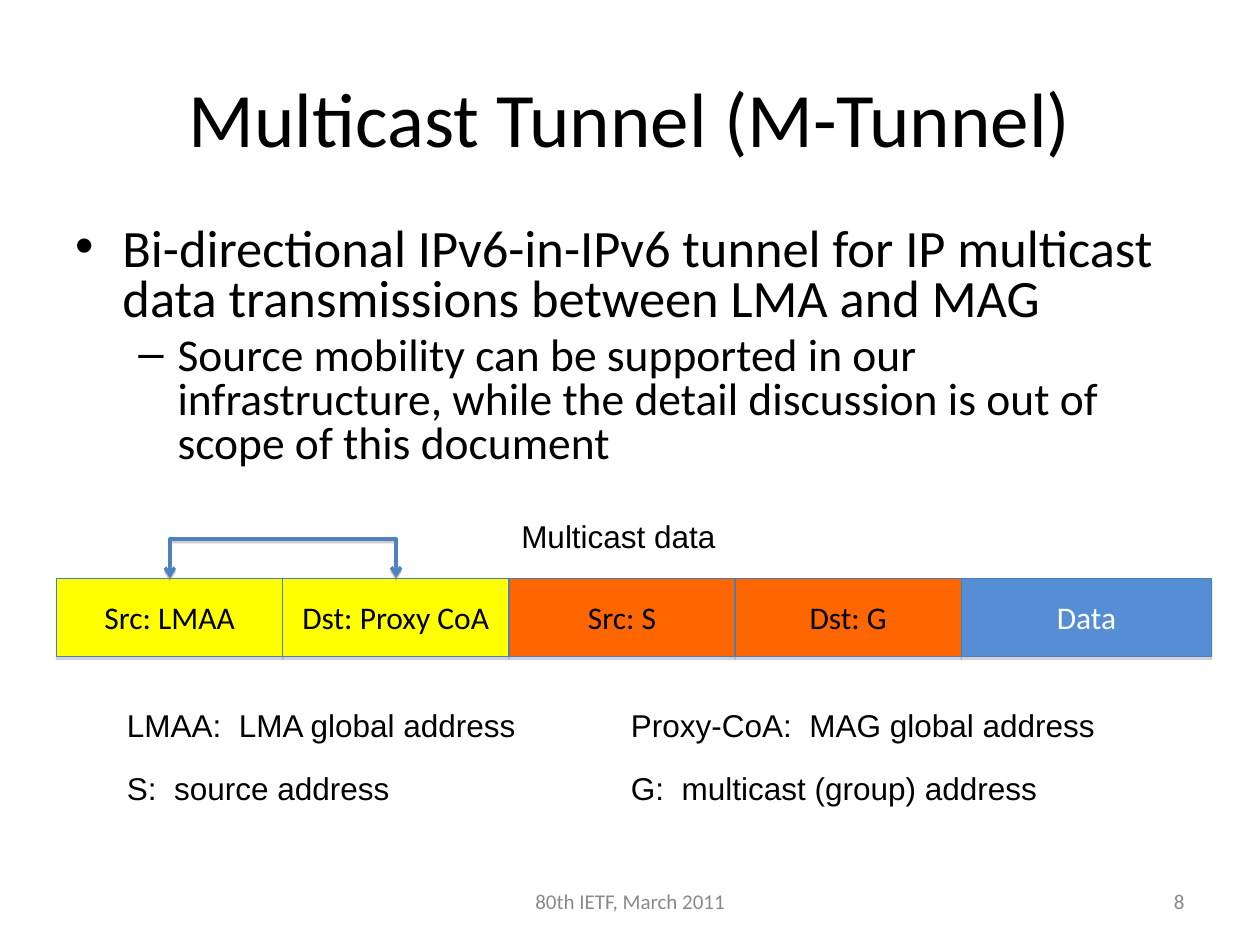
from dataclasses import dataclass

from lxml.etree import SubElement
from pptx import Presentation
from pptx.dml.color import RGBColor as Rgb
from pptx.enum.shapes import MSO_CONNECTOR as Connector, MSO_SHAPE as Shape
from pptx.enum.text import MSO_ANCHOR as Anchor, PP_ALIGN as Align
from pptx.oxml.ns import qn
from pptx.util import Cm, Pt


@dataclass(frozen=True)
class Theme:
    """Colours, fonts and type sizes of the deck."""
    ink: str = "000000"
    paper: str = "FFFFFF"
    muted: str = "898989"
    outer: str = "FFFF00"
    inner: str = "FF6600"
    payload: str = "558ED5"
    border: str = "4A7EBB"
    arrow: str = "4F81BD"
    shade: str = "808080"
    main: str = "Calibri"
    label: str = "Arial"
    title_size: int = 44
    point_sizes: tuple = (30, 26)
    text_size: int = 18
    footer_size: int = 12


def put(target, **values):
    """Set every given attribute on the target."""
    for key, value in values.items():
        setattr(target, key, value)


class SlideBuilder:
    """Draws styled elements on the current slide."""

    def __init__(self, slide, theme):
        self.slide, self.theme = slide, theme

    def fill_text(self, paragraph, text, size, font=None, color=None, align=Align.LEFT):
        """Fill one paragraph with formatted text."""
        paragraph.text = text
        paragraph.alignment = align
        run_font = paragraph.runs[0].font
        put(run_font, size=Pt(size), name=font or self.theme.main)
        run_font.color.rgb = Rgb.from_string(color or self.theme.ink)

    def shadow(self, shape, alpha, distance):
        """Give the shape a sharp shadow straight below."""
        effects = SubElement(shape._element.spPr, qn("a:effectLst"))
        outer = SubElement(effects, qn("a:outerShdw"), blurRad="0", rotWithShape="0",
                           dist=str(Pt(distance)), dir="5400000")
        tint = SubElement(outer, qn("a:srgbClr"), val=self.theme.shade)
        SubElement(tint, qn("a:alpha"), val=str(alpha * 1000))

    def title(self, text, left, top, width, height):
        """Place and fill the title placeholder."""
        heading = self.slide.shapes.title
        put(heading, left=Cm(left), top=Cm(top), width=Cm(width), height=Cm(height))
        heading.text_frame.vertical_anchor = Anchor.MIDDLE
        self.fill_text(heading.text_frame.paragraphs[0], text, self.theme.title_size,
                       align=Align.CENTER)

    def box(self, left, top, width, height, **frame_format):
        """Add an empty text box and return its frame."""
        frame = self.slide.shapes.add_textbox(
            Cm(left), Cm(top), Cm(width), Cm(height)).text_frame
        put(frame, **frame_format)
        return frame

    def points(self, items, left, top, width, height):
        """Add the bulleted points, one level deeper each."""
        frame = self.box(left, top, width, height, word_wrap=True)
        bullets = (("•", 0.95, -0.95), ("–", 2.06, -0.79))
        for level, (text, (mark, margin, indent)) in enumerate(zip(items, bullets)):
            paragraph = frame.add_paragraph() if level else frame.paragraphs[0]
            size = self.theme.point_sizes[level]
            put(paragraph, level=level, line_spacing=0.8)
            if level:
                paragraph.space_before = Pt(size * 0.2)
            properties = paragraph._p.get_or_add_pPr()
            properties.set("marL", str(Cm(margin)))
            properties.set("indent", str(Cm(indent)))
            SubElement(properties, qn("a:buFont"), typeface=self.theme.label)
            SubElement(properties, qn("a:buChar"), char=mark)
            self.fill_text(paragraph, text, size)

    def label(self, text, left, top, width):
        """Add a one-line label."""
        frame = self.box(left, top, width, 1.02, word_wrap=False)
        self.fill_text(frame.paragraphs[0], text, self.theme.text_size, self.theme.label)

    def footer(self, text, left, width, align):
        """Add a muted footer text."""
        frame = self.box(left, 17.65, width, 1.02, word_wrap=True,
                         vertical_anchor=Anchor.MIDDLE)
        self.fill_text(frame.paragraphs[0], text, self.theme.footer_size,
                       color=self.theme.muted, align=align)

    def field(self, text, fill, color, left, top, width, height):
        """Add one packet field."""
        cell = self.slide.shapes.add_shape(
            Shape.RECTANGLE, Cm(left), Cm(top), Cm(width), Cm(height))
        cell.fill.solid()
        cell.fill.fore_color.rgb = Rgb.from_string(fill)
        cell.line.color.rgb = Rgb.from_string(self.theme.border)
        cell.line.width = Pt(0.75)
        self.shadow(cell, 35, 1.8)
        put(cell.text_frame, word_wrap=True, vertical_anchor=Anchor.MIDDLE)
        self.fill_text(cell.text_frame.paragraphs[0], text, self.theme.text_size,
                       color=color, align=Align.CENTER)

    def bracket(self, start, end, base, rise):
        """Join two points on the base with a raised double arrow."""
        middle, half, depth = (start + end) / 2, (end - start) / 2, 0.01
        link = self.slide.shapes.add_connector(
            Connector.ELBOW, Cm(middle + depth), Cm(base + half),
            Cm(middle), Cm(base - half))
        properties = link._element.spPr
        properties.find(qn("a:xfrm")).set("rot", "5400000")
        geometry = properties.find(qn("a:prstGeom"))
        SubElement(geometry.get_or_add_avLst(), qn("a:gd"), name="adj1",
                   fmla=f"val {round(rise / depth * 100000)}")
        link.line.color.rgb = Rgb.from_string(self.theme.arrow)
        link.line.width = Pt(2)
        for tip in ("a:headEnd", "a:tailEnd"):
            SubElement(link.get_or_add_ln(), qn(tip), type="arrow")
        self.shadow(link, 38, 1.6)


def main():
    """Build the tunnel slide and save it."""
    theme = Theme()
    deck = Presentation()
    put(deck, slide_width=Cm(25.4), slide_height=Cm(19.05))
    page = SlideBuilder(deck.slides.add_slide(deck.slide_layouts[5]), theme)

    page.title("Multicast Tunnel (M-Tunnel)", 1.27, 0.76, 22.86, 3.18)
    page.points((
        "Bi-directional IPv6-in-IPv6 tunnel for IP multicast data transmissions "
        "between LMA and MAG",
        "Source mobility can be supported in our infrastructure, while the detail "
        "discussion is out of scope of this document",
    ), 1.27, 4.45, 22.86, 5.33)

    left, top, pitch, height = 1.14, 11.66, 4.56, 1.57
    packet = (
        ("Src: LMAA", theme.outer, theme.ink, pitch),
        ("Dst: Proxy CoA", theme.outer, theme.ink, pitch),
        ("Src: S", theme.inner, theme.ink, pitch),
        ("Dst: G", theme.inner, theme.ink, pitch),
        ("Data", theme.payload, theme.paper, 5.05),
    )
    for column, (text, fill, color, width) in enumerate(packet):
        page.field(text, fill, color, left + column * pitch, top, width, height)
    page.bracket(left + pitch / 2, left + pitch * 1.5, top, 0.8)
    page.label("Multicast data", 10.26, 10.29, 4.47)

    legend = (
        (("LMAA:  LMA global address", 8.43), ("Proxy-CoA:  MAG global address", 9.96)),
        (("S:  source address", 5.87), ("G:  multicast (group) address", 8.79)),
    )
    for row, entries in enumerate(legend):
        for column, (text, width) in enumerate(entries):
            page.label(text, 2.31 + column * 10.16, 14.1 + row * 1.27, width)

    page.footer("80th IETF, March 2011", 8.68, 8.05, Align.CENTER)
    page.footer("8", 18.21, 5.92, Align.RIGHT)
    deck.save("out.pptx")


if __name__ == "__main__":
    main()
